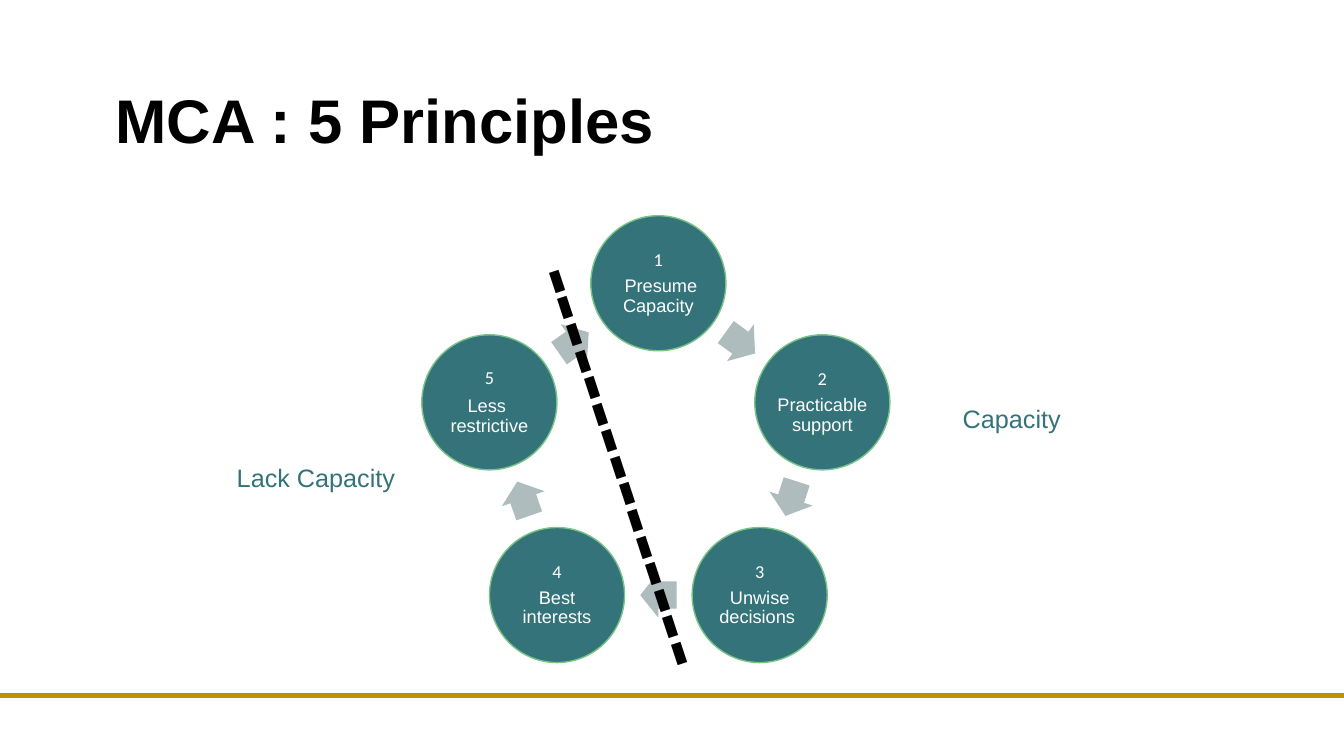
import math
from lxml import etree
from pptx import Presentation
from pptx.dml.color import RGBColor
from pptx.enum.shapes import MSO_CONNECTOR, MSO_SHAPE
from pptx.enum.text import MSO_ANCHOR, MSO_AUTO_SIZE, PP_ALIGN
from pptx.oxml.ns import qn
from pptx.util import Inches, Pt

STRAIGHT = MSO_CONNECTOR.STRAIGHT
OVAL, ARROW = MSO_SHAPE.OVAL, MSO_SHAPE.RIGHT_ARROW
MIDDLE, TOP = MSO_ANCHOR.MIDDLE, MSO_ANCHOR.TOP
CENTER, LEFT = PP_ALIGN.CENTER, PP_ALIGN.LEFT
NO_FIT, GROW = MSO_AUTO_SIZE.NONE, MSO_AUTO_SIZE.SHAPE_TO_FIT_TEXT

BLACK = RGBColor(0x00, 0x00, 0x00)
WHITE = RGBColor(0xFF, 0xFF, 0xFF)
TEAL = RGBColor(0x34, 0x73, 0x7A)
GREEN = RGBColor(0x78, 0xC4, 0x86)
GREY = RGBColor(0xAE, 0xBC, 0xBE)
GOLD = RGBColor(0xC0, 0x91, 0x02)

TITLE = "MCA : 5 Principles"
PRINCIPLES = [
    [" Presume Capacity"],
    ["Practicable support"],
    ["Unwise decisions "],
    ["Best interests"],
    ["Less ", "restrictive"],
]
DIVIDER = "-" * 15
SIDES = [("Capacity", 9.45, 3.95, 1.18), ("Lack Capacity", 2.25, 4.54, 1.77)]

RING_X, RING_Y, RING_RADIUS = 6.53, 4.52, 1.71
LAST_SHIFT = -0.05
CIRCLE = 1.34
ARROW_LENGTH, ARROW_HEIGHT = 0.36, 0.45


def write(frame, *lines, size, color, font="Arial", first_font=None, bold=False,
          align=LEFT, anchor=TOP, fit=NO_FIT, wrap=True, spacing=1.0, after=0, margin=None):
    frame.word_wrap = wrap
    frame.auto_size = fit
    frame.vertical_anchor = anchor
    if margin is not None:
        frame.margin_left = frame.margin_right = Inches(margin)
        frame.margin_top = frame.margin_bottom = Inches(margin)
    for index, line in enumerate(lines):
        paragraph = frame.add_paragraph() if index else frame.paragraphs[0]
        inner = 0 < index < len(lines) - 1
        paragraph.alignment = align
        paragraph.line_spacing = 1.0 if inner else spacing
        paragraph.space_before = Pt(0)
        paragraph.space_after = Pt(0 if inner else after)
        run = paragraph.add_run()
        run.text = line
        run.font.name = first_font if first_font and index == 0 else font
        run.font.size = Pt(size)
        run.font.bold = bold
        run.font.color.rgb = color


def centred_shape(slide, kind, x, y, width, height, fill):
    shape = slide.shapes.add_shape(kind, Inches(x - width / 2), Inches(y - height / 2),
                                   Inches(width), Inches(height))
    shape.shadow.inherit = False
    shape.fill.solid()
    shape.fill.fore_color.rgb = fill
    shape.line.fill.background()
    return shape


def ring_centres():
    centres = []
    for index in range(len(PRINCIPLES)):
        angle = math.radians(360 / len(PRINCIPLES) * index - 90)
        centres.append((RING_X + RING_RADIUS * math.cos(angle),
                        RING_Y + RING_RADIUS * math.sin(angle)))
    x, y = centres[-1]
    centres[-1] = (x + LAST_SHIFT, y)
    return centres


def add_ring(slide):
    centres = ring_centres()
    for index, (words, (x, y)) in enumerate(zip(PRINCIPLES, centres)):
        circle = centred_shape(slide, OVAL, x, y, CIRCLE, CIRCLE, TEAL)
        circle.line.color.rgb = GREEN
        circle.line.width = Pt(1)
        write(circle.text_frame, str(index + 1), *words, size=13, color=WHITE,
              first_font="Calibri", align=CENTER, anchor=MIDDLE, spacing=0.9,
              after=4.55, margin=0.02)

        next_x, next_y = centres[(index + 1) % len(centres)]
        arrow = centred_shape(slide, ARROW, (x + next_x) / 2, (y + next_y) / 2,
                              ARROW_LENGTH, ARROW_HEIGHT, GREY)
        arrow.adjustments[0] = 0.6
        arrow.adjustments[1] = 0.5
        arrow.rotation = math.degrees(math.atan2(next_y - y, next_x - x)) % 360


def main():
    deck = Presentation()
    deck.slide_width, deck.slide_height = Inches(13.33), Inches(7.5)
    slide = deck.slides.add_slide(deck.slide_layouts[5])

    footer_rule = slide.shapes.add_connector(STRAIGHT, 0, Inches(6.9),
                                             deck.slide_width, Inches(6.9))
    footer_rule.line.color.rgb = GOLD
    footer_rule.line.width = Pt(3)
    etree.SubElement(footer_rule._element.spPr, qn("a:effectLst"))

    title = slide.shapes.title
    title.left, title.top = Inches(-2.47), Inches(0.87)
    title.width, title.height = Inches(12.58), Inches(0.72)
    write(title.text_frame, TITLE, size=44, color=BLACK, bold=True,
          align=CENTER, anchor=MIDDLE, spacing=0.9)

    add_ring(slide)

    divider = slide.shapes.add_textbox(Inches(3.96), Inches(4.19), Inches(4.65), Inches(1.11))
    divider.rotation = 71.8
    write(divider.text_frame, DIVIDER, size=60, color=BLACK, bold=True, fit=GROW)

    for label, x, y, width in SIDES:
        side = slide.shapes.add_textbox(Inches(x), Inches(y), Inches(width), Inches(0.4))
        write(side.text_frame, label, size=18, color=TEAL, fit=GROW, wrap=False)

    deck.save("out.pptx")


if __name__ == "__main__":
    main()
